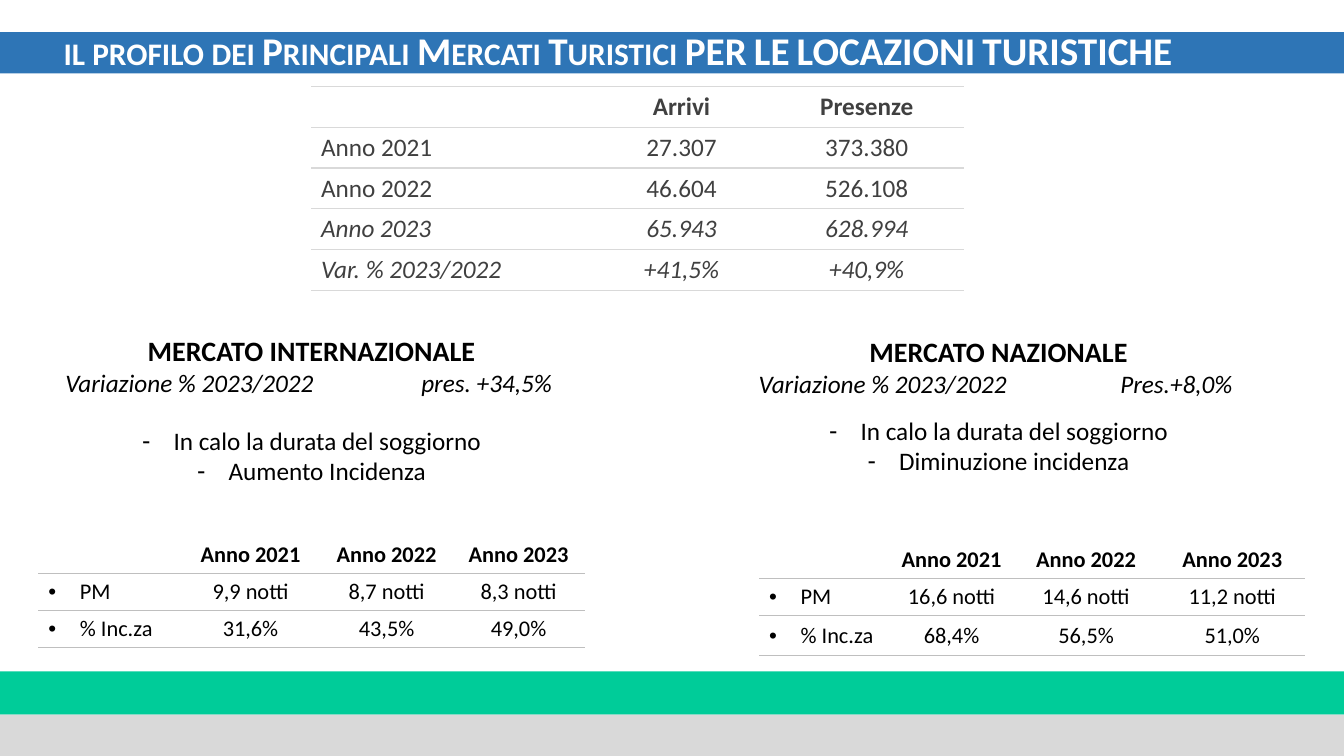
from lxml.etree import SubElement
from pptx import Presentation
from pptx.dml.color import RGBColor
from pptx.enum.shapes import MSO_SHAPE
from pptx.enum.text import MSO_ANCHOR, PP_ALIGN
from pptx.oxml.ns import qn
from pptx.util import Pt

FONT = "Calibri"
BLUE = RGBColor(0x2E, 0x75, 0xB6)
GREEN = RGBColor(0x00, 0xCC, 0x99)
SILVER = RGBColor(0xD9, 0xD9, 0xD9)
GRAY = RGBColor(0xBF, 0xBF, 0xBF)
DARK = RGBColor(0x40, 0x40, 0x40)
BLACK = RGBColor(0, 0, 0)
WHITE = RGBColor(0xFF, 0xFF, 0xFF)
PLAIN_TABLE_STYLE = "{2D5ABB26-0587-4C30-8999-92F81FD0307C}"


def add_span(para, text, size, color=BLACK, bold=False, italic=False, bullet=None):
    """Add a formatted run, with a hanging bullet on its paragraph if one is given."""
    span = para.add_run()
    span.text = text
    span.font.name = FONT
    span.font.size = Pt(size)
    span.font.color.rgb = color
    span.font.bold = bold
    span.font.italic = italic
    if bullet:
        properties = para._p.get_or_add_pPr()
        properties.set("marL", str(Pt(22.5)))
        properties.set("indent", str(-Pt(22.5)))
        SubElement(properties, qn("a:buFont"), typeface="Arial")
        SubElement(properties, qn("a:buChar"), char=bullet)
    return span


def add_ruled_table(page, left, top, widths, heights, rows, size, color, rule,
                    top_rule=False, italic_from=None, bullet=None):
    """Add a table whose only borders are horizontal rules."""
    frame = page.shapes.add_table(len(rows), len(widths), Pt(left), Pt(top),
                                  Pt(sum(widths)), Pt(sum(heights)))
    table = frame.table
    table.horz_banding = False
    table._tbl.tblPr.find(qn("a:tableStyleId")).text = PLAIN_TABLE_STYLE
    for column, width in zip(table.columns, widths):
        column.width = Pt(width)
    for r, (row, height) in enumerate(zip(rows, heights)):
        table.rows[r].height = Pt(height)
        for c, text in enumerate(row):
            cell = table.cell(r, c)
            cell.vertical_anchor = MSO_ANCHOR.MIDDLE
            para = cell.text_frame.paragraphs[0]
            para.alignment = PP_ALIGN.CENTER if c else PP_ALIGN.LEFT
            if text:
                add_span(para, text, size, color, bold=r == 0,
                         italic=italic_from is not None and r >= italic_from,
                         bullet=None if c else bullet)
            else:
                SubElement(para._p, qn("a:endParaRPr"), sz=str(size * 100))
            sides = ("a:lnT", "a:lnB") if top_rule and r == 0 else ("a:lnB",)
            for side in sides:
                line = SubElement(cell._tc.get_or_add_tcPr(), qn(side), w=str(Pt(0.96)))
                fill = SubElement(line, qn("a:solidFill"))
                SubElement(fill, qn("a:srgbClr"), val=str(rule))
            cell.fill.background()


deck = Presentation()
deck.slide_width = Pt(960)
deck.slide_height = Pt(540)
page = deck.slides.add_slide(deck.slide_layouts[5])

# Title and bands
title = page.shapes.title
title.left, title.top, title.width, title.height = Pt(38.2), Pt(19.4), Pt(892), Pt(31.7)
title.text_frame.vertical_anchor = MSO_ANCHOR.MIDDLE
title.text_frame.word_wrap = True
heading = title.text_frame.paragraphs[0]
heading.alignment = PP_ALIGN.LEFT
span = add_span(heading, "il profilo dei Principali Mercati Turistici PER LE LOCAZIONI TURISTICHE",
                28, WHITE, bold=True)
span.font._element.set("cap", "small")

for top, height, color in [(479.5, 31), (510.5, 29.5), (23, 29.5)] and [
        (479.5, 31, GREEN), (510.5, 29.5, SILVER), (23, 29.5, BLUE)]:
    band = page.shapes.add_shape(MSO_SHAPE.RECTANGLE, 0, Pt(top), deck.slide_width, Pt(height))
    band.shadow.inherit = False
    band.fill.solid()
    band.fill.fore_color.rgb = color
    band.line.fill.background()
    title.element.addprevious(band.element)

# Overall arrivals and nights
totals = [
    ["", "Arrivi", "Presenze"],
    ["Anno 2021", "27.307", "373.380"],
    ["Anno 2022", "46.604", "526.108"],
    ["Anno 2023", "65.943", "628.994"],
    ["Var. % 2023/2022", "+41,5%", "+40,9%"],
]
add_ruled_table(page, 222.2, 61.6, [201.6, 126, 138.6], [28.9] * 5, totals,
                18, DARK, SILVER, top_rule=True, italic_from=3)

# The two markets: text box, then table
years = ["", "Anno 2021", "Anno 2022", "Anno 2023"]
markets = [
    {
        "name": "MERCATO INTERNAZIONALE",
        "change": "Variazione % 2023/2022\tpres. +34,5% ",
        "trend": "Aumento Incidenza",
        "box": (27.4, 234.7, 390.2, 116), "gap": 20,
        "table": (27.4, 383), "widths": [101.5, 100.1, 94.3, 94.3],
        "heights": [26.5, 26.5, 26.5],
        "rows": [years,
                 ["PM", "9,9 notti", "8,7 notti", "8,3 notti"],
                 ["% Inc.za", "31,6%", "43,5%", "49,0%"]],
    },
    {
        "name": "MERCATO NAZIONALE",
        "change": "Variazione % 2023/2022\t Pres.+8,0% ",
        "trend": "Diminuzione incidenza",
        "box": (513.4, 235.4, 399.6, 108), "gap": 12.2,
        "table": (542.2, 386.6), "widths": [93.6, 87.8, 104.4, 104.4],
        "heights": [26.5, 26.5, 28.8],
        "rows": [years,
                 ["PM", "16,6 notti", "14,6 notti", "11,2 notti"],
                 ["% Inc.za", "68,4%", "56,5%", "51,0%"]],
    },
]
for market in markets:
    box = page.shapes.add_textbox(*[Pt(length) for length in market["box"]])
    box.text_frame.word_wrap = True
    name, change, stay, trend = [box.text_frame.paragraphs[0]] + [
        box.text_frame.add_paragraph() for _ in range(3)]
    for para in (name, change, stay, trend):
        para.alignment = PP_ALIGN.CENTER
    stay.space_before = Pt(market["gap"])
    add_span(name, market["name"], 20, bold=True)
    add_span(change, market["change"], 18, italic=True)
    tabs = SubElement(change._p.get_or_add_pPr(), qn("a:tabLst"))
    for position in (176.4, 254.2):
        SubElement(tabs, qn("a:tab"), pos=str(Pt(position)), algn="l")
    add_span(stay, "In calo la durata del soggiorno", 18, bullet="-")
    add_span(trend, market["trend"], 18, bullet="-")
    add_ruled_table(page, *market["table"], market["widths"], market["heights"],
                    market["rows"], 16, BLACK, GRAY, bullet="•")

deck.save("out.pptx")
